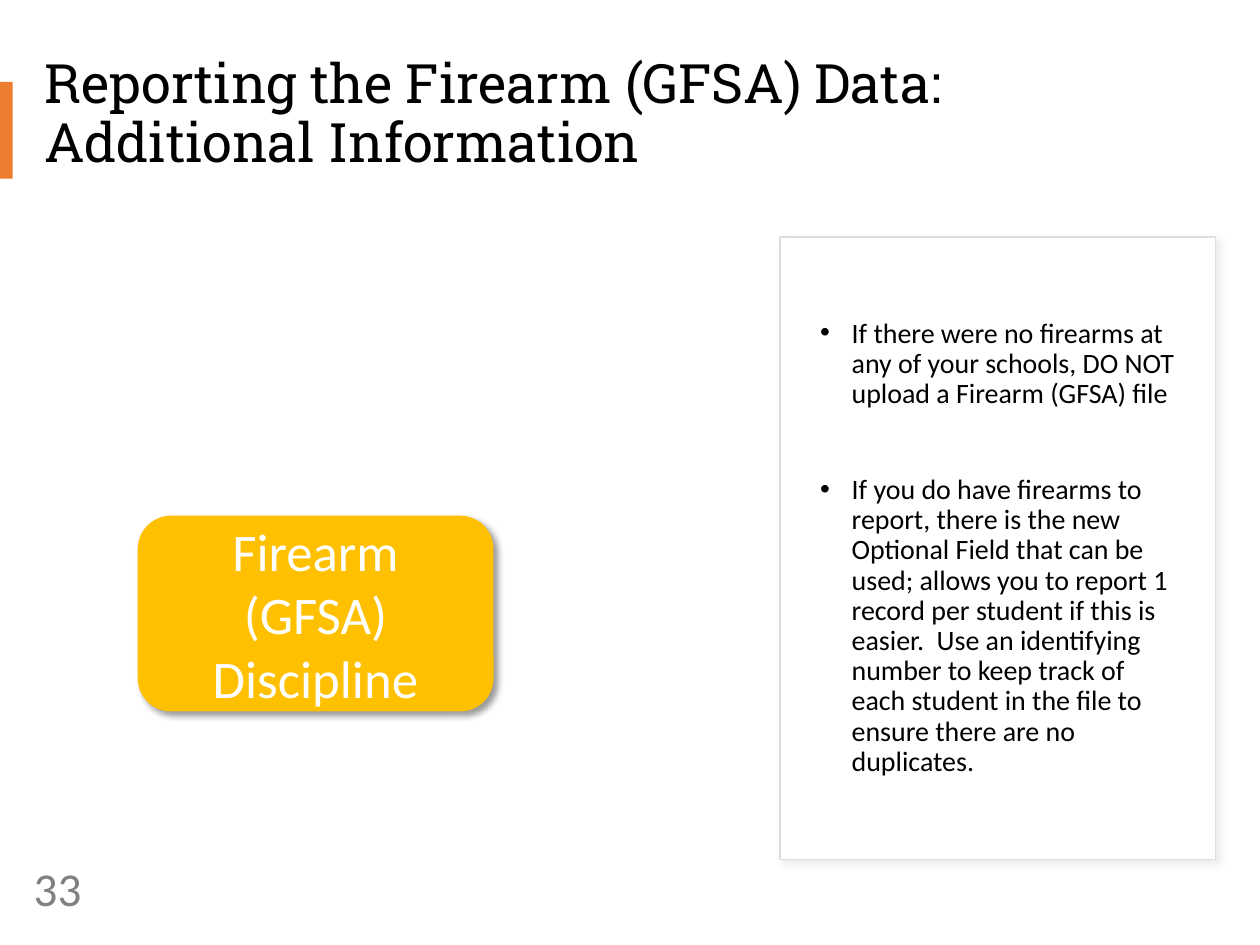
"""Build the slide on additional information for firearm data reporting."""
from lxml.etree import SubElement
from pptx import Presentation
from pptx.dml.color import RGBColor
from pptx.enum.shapes import MSO_SHAPE
from pptx.enum.text import MSO_ANCHOR, PP_ALIGN
from pptx.oxml.ns import qn
from pptx.util import Pt

BLACK = RGBColor(0x00, 0x00, 0x00)
WHITE = RGBColor(0xFF, 0xFF, 0xFF)
GRAY = RGBColor(0x80, 0x80, 0x80)
ORANGE = RGBColor(0xED, 0x7D, 0x31)
AMBER = RGBColor(0xFF, 0xC0, 0x00)
PANEL_LINE = RGBColor(0xDE, 0xDE, 0xDE)
PANEL_SHADOW = RGBColor(0xD9, 0xD9, 0xD9)

TITLE = "Reporting the Firearm (GFSA) Data: \vAdditional Information"
NOTES = [
    "If there were no firearms at any of your schools, DO NOT upload a Firearm (GFSA) file",
    "If you do have firearms to report, there is the new Optional Field that can be used; "
    "allows you to report 1 record per student if this is easier.  Use an identifying number "
    "to keep track of each student in the file to ensure there are no duplicates.",
]


def set_font(paragraph, name, size, color):
    paragraph.font.name = name
    paragraph.font.size = Pt(size)
    paragraph.font.color.rgb = color


def add_text(slide, box, text, name, size, color):
    shape = slide.shapes.add_textbox(*map(Pt, box))
    shape.text_frame.word_wrap = True
    paragraph = shape.text_frame.paragraphs[0]
    paragraph.text = text
    set_font(paragraph, name, size, color)
    return shape.text_frame


def set_margins(frame, bottom=0):
    frame.margin_left = frame.margin_top = frame.margin_right = Pt(0)
    frame.margin_bottom = Pt(bottom)


def add_box(slide, kind, box, fill, line=None, line_width=1):
    shape = slide.shapes.add_shape(kind, *map(Pt, box))
    shape.shadow.inherit = False
    shape.fill.solid()
    shape.fill.fore_color.rgb = fill
    if line is None:
        shape.line.fill.background()
    else:
        shape.line.color.rgb = line
        shape.line.width = Pt(line_width)
    return shape


def add_shadow(shape, color, opacity):
    effects = shape._element.spPr.find(qn("a:effectLst"))
    shadow = SubElement(effects, qn("a:outerShdw"), blurRad=str(Pt(4)), dist=str(Pt(3)),
                        dir=str(45 * 60000), algn="tl", rotWithShape="0")
    rgb = SubElement(shadow, qn("a:srgbClr"), val=str(color))
    SubElement(rgb, qn("a:alpha"), val=str(opacity * 1000))


def add_bullet_list(slide, box, items):
    frame = slide.shapes.add_textbox(*map(Pt, box)).text_frame
    frame.word_wrap = True
    frame.vertical_anchor = MSO_ANCHOR.MIDDLE
    set_margins(frame, bottom=3.6)
    for index, item in enumerate(items):
        paragraph = frame.add_paragraph() if index else frame.paragraphs[0]
        paragraph.text = item
        paragraph.line_spacing = 0.9
        paragraph.space_before = Pt(37.5 if index else 0)
        properties = paragraph._p.get_or_add_pPr()
        properties.set("marL", str(Pt(18)))
        properties.set("indent", str(-Pt(18)))
        SubElement(properties, qn("a:buFont"), typeface="Arial")
        SubElement(properties, qn("a:buChar"), char="•")
        set_font(paragraph, "Calibri", 16, BLACK)


def add_label_box(slide, box, text):
    shape = add_box(slide, MSO_SHAPE.ROUNDED_RECTANGLE, box, AMBER, AMBER)
    add_shadow(shape, BLACK, 40)
    frame = shape.text_frame
    frame.word_wrap = True
    frame.vertical_anchor = MSO_ANCHOR.MIDDLE
    paragraph = frame.paragraphs[0]
    paragraph.text = text
    paragraph.alignment = PP_ALIGN.CENTER
    set_font(paragraph, "Calibri", 30.2, WHITE)


def main():
    presentation = Presentation()
    presentation.slide_width, presentation.slide_height = Pt(720), Pt(540)
    slide = presentation.slides.add_slide(presentation.slide_layouts[6])

    title = add_text(slide, (25.2, 32.4, 661.7, 87.1), TITLE, "Roboto Slab", 31, BLACK)
    set_margins(title)
    title.paragraphs[0].line_spacing = 0.9
    add_box(slide, MSO_SHAPE.RECTANGLE, (0, 46.8, 7.2, 55.4), ORANGE)

    panel = add_box(slide, MSO_SHAPE.RECTANGLE, (445.7, 135.4, 249.1, 355.7),
                    WHITE, PANEL_LINE, 0.75)
    add_shadow(panel, PANEL_SHADOW, 50)
    add_bullet_list(slide, (468.7, 159.1, 203.8, 311.8), NOTES)

    add_text(slide, (12.2, 487.4, 272.9, 48.2), "33", "Calibri", 26.9, GRAY)
    add_label_box(slide, (79.2, 295.2, 202.3, 110.9), "Firearm (GFSA) Discipline")
    presentation.save("out.pptx")


if __name__ == "__main__":
    main()
